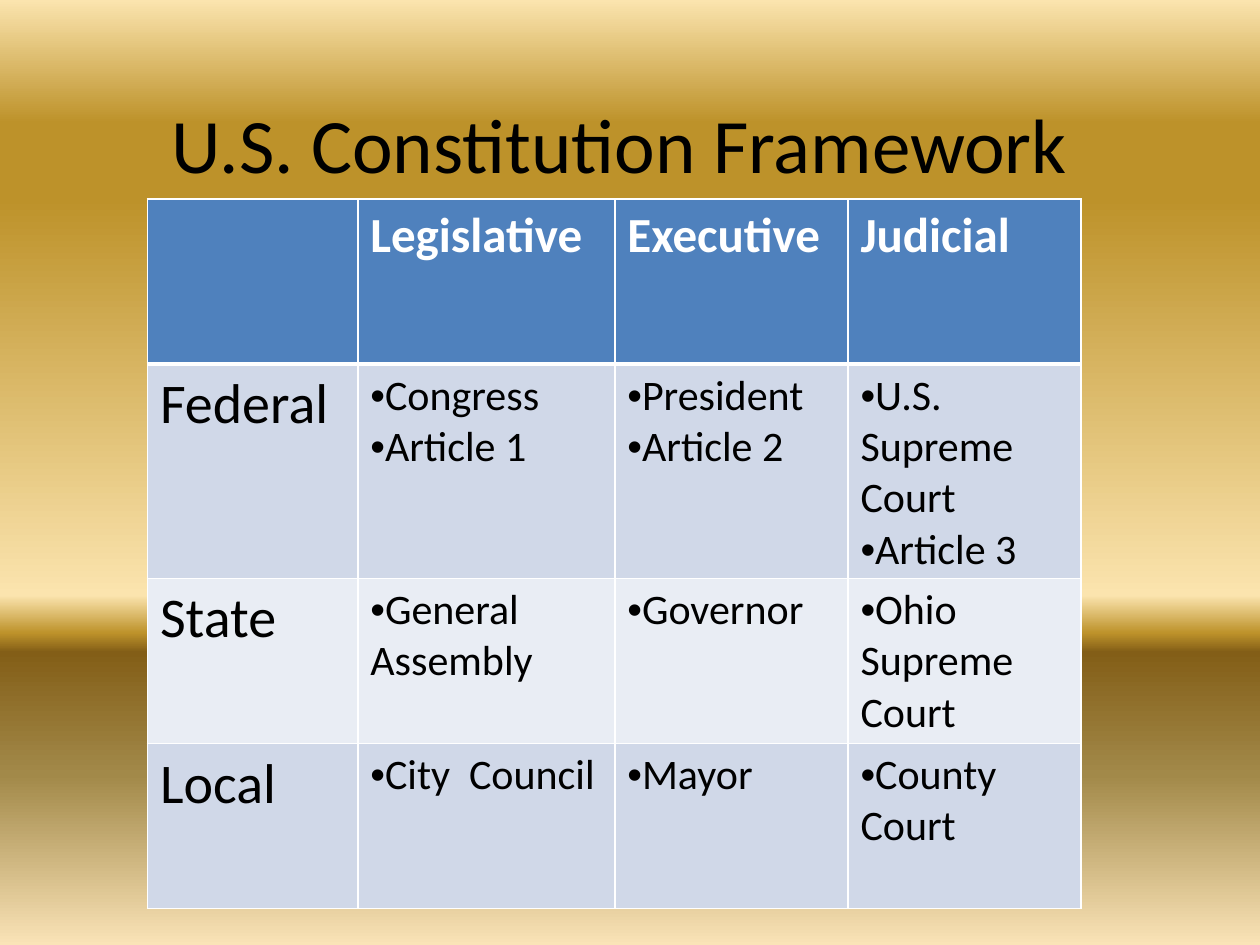
from lxml import etree
from pptx import Presentation
from pptx.dml.color import RGBColor
from pptx.enum import text
from pptx.oxml.ns import qn
from pptx.util import Inches, Pt

FONT = "Calibri"
BLACK = RGBColor(0x00, 0x00, 0x00)
WHITE = RGBColor(0xFF, 0xFF, 0xFF)
HEADER_BLUE = RGBColor(0x4F, 0x81, 0xBD)
BANDS = [RGBColor(0xE9, 0xED, 0xF4), RGBColor(0xD0, 0xD8, 0xE8)]
CREAM = RGBColor(0xFB, 0xE4, 0xAE)
GOLD = RGBColor(0xBD, 0x92, 0x2A)
BRONZE = RGBColor(0x83, 0x5E, 0x17)
OLIVE = RGBColor(0xA2, 0x89, 0x49)
PALE = RGBColor(0xFA, 0xE3, 0xB7)
GOLD_STOPS = [(0, CREAM), (13, GOLD), (21, GOLD), (63, CREAM),
              (67, GOLD), (69, BRONZE), (82, OLIVE), (100, PALE)]

COLUMN_WIDTHS = [1.67, 2.04, 1.85, 1.85]
ROW_HEIGHT = 1.31
BRANCHES = ["", "Legislative", "Executive", "Judicial"]
LEVELS = [
    ("Federal", ["Congress", "Article 1"], ["President", "Article 2"],
     ["U.S. Supreme  Court", "Article 3"]),
    ("State", ["General Assembly"], ["Governor"], ["Ohio Supreme Court"]),
    ("Local", ["City  Council"], ["Mayor"], ["County Court"]),
]


def add_color(parent, color):
    etree.SubElement(parent, qn("a:srgbClr"), val=str(color))


def paint_background(slide):
    fill = slide.background.fill
    fill.gradient()
    fill.gradient_angle = 270
    stops = slide.background._cSld.find(".//" + qn("a:gsLst"))
    for stop in list(stops):
        stops.remove(stop)
    for percent, color in GOLD_STOPS:
        stop = etree.SubElement(stops, qn("a:gs"), pos=str(percent * 1000))
        add_color(stop, color)


def write(paragraph, words, size, color=BLACK, bold=False):
    run = paragraph.add_run()
    run.text = words
    run.font.name = FONT
    run.font.size = Pt(size)
    run.font.bold = bold
    run.font.color.rgb = color


def add_title(slide, words):
    title = slide.shapes.add_textbox(Inches(0.67), Inches(0.33), Inches(8.5), Inches(1.61))
    frame = title.text_frame
    frame.word_wrap = True
    frame.vertical_anchor = text.MSO_ANCHOR.MIDDLE
    heading = frame.paragraphs[0]
    heading.alignment = text.PP_ALIGN.CENTER
    write(heading, words, 44)


def style_cell(cell, color, top=1, bottom=1):
    properties = cell._tc.get_or_add_tcPr()
    for side, width in (("L", 1), ("R", 1), ("T", top), ("B", bottom)):
        border = etree.SubElement(properties, qn("a:ln" + side), w=str(Pt(width)))
        add_color(etree.SubElement(border, qn("a:solidFill")), WHITE)
    cell.fill.solid()
    cell.fill.fore_color.rgb = color


def fill_bullets(cell, items):
    frame = cell.text_frame
    for index, item in enumerate(items):
        paragraph = frame.add_paragraph() if index else frame.paragraphs[0]
        properties = paragraph._p.get_or_add_pPr()
        etree.SubElement(properties, qn("a:buFont"), typeface="Arial")
        etree.SubElement(properties, qn("a:buChar"), char="•")
        write(paragraph, item, 24)


def add_framework(slide):
    row_count = len(LEVELS) + 1
    table = slide.shapes.add_table(
        row_count, len(BRANCHES), Inches(1.17), Inches(1.58),
        Inches(sum(COLUMN_WIDTHS)), Inches(ROW_HEIGHT * row_count)).table
    for column, width in zip(table.columns, COLUMN_WIDTHS):
        column.width = Inches(width)
    for row in table.rows:
        row.height = Inches(ROW_HEIGHT)

    for column, branch in enumerate(BRANCHES):
        cell = table.cell(0, column)
        style_cell(cell, HEADER_BLUE, bottom=3)
        if branch:
            write(cell.text_frame.paragraphs[0], branch, 28, WHITE, True)

    for row, (level, *bodies) in enumerate(LEVELS, 1):
        for column in range(len(BRANCHES)):
            style_cell(table.cell(row, column), BANDS[row % 2], top=3 if row == 1 else 1)
        write(table.cell(row, 0).text_frame.paragraphs[0], level, 32)
        for column, items in enumerate(bodies, 1):
            fill_bullets(table.cell(row, column), items)


def main():
    deck = Presentation()
    deck.slide_width, deck.slide_height = Inches(10), Inches(7.5)
    slide = deck.slides.add_slide(deck.slide_layouts[6])
    paint_background(slide)
    add_title(slide, "U.S. Constitution Framework")
    add_framework(slide)
    deck.save("out.pptx")


if __name__ == "__main__":
    main()
